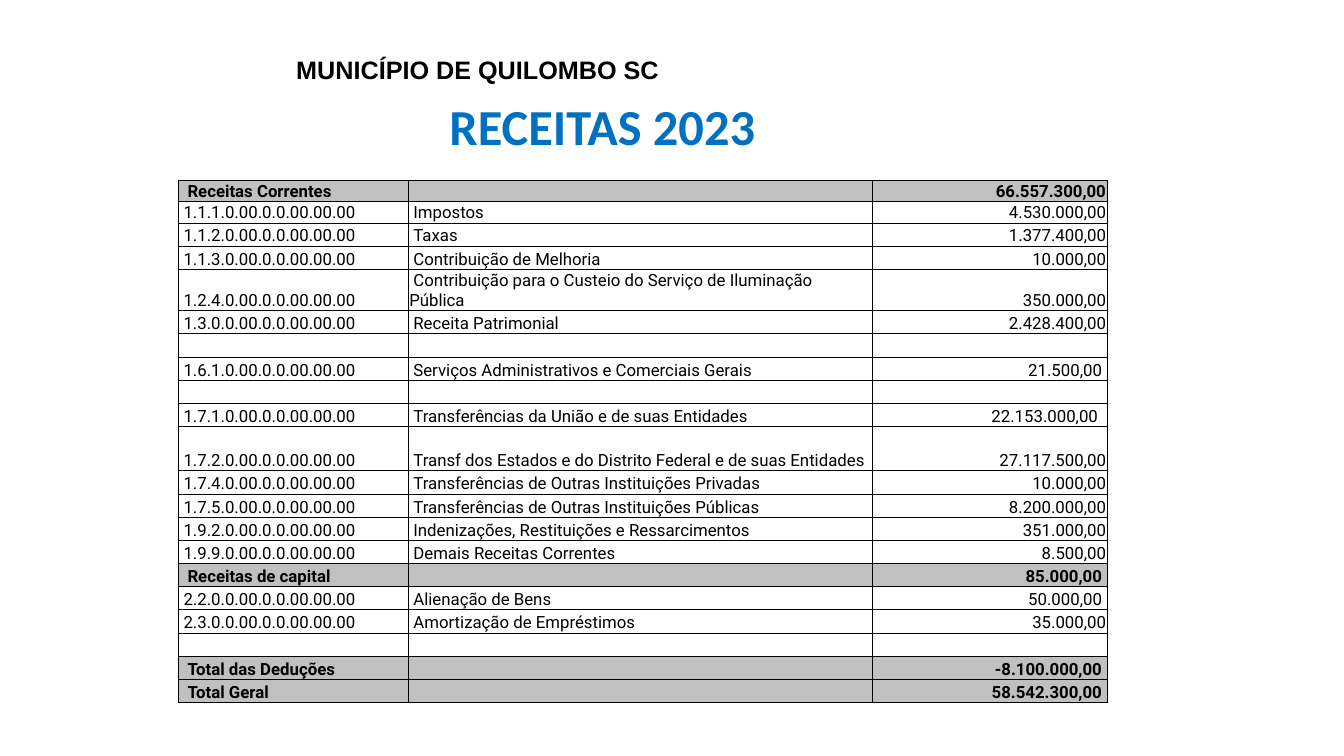
from typing import NamedTuple

from lxml import etree
from pptx import Presentation
from pptx.dml.color import RGBColor
from pptx.enum import text
from pptx.oxml import ns
from pptx.util import Inches, Pt

BLACK = RGBColor(0, 0, 0)
BLUE = RGBColor(0x00, 0x70, 0xC0)
GREY = RGBColor(0xC0, 0xC0, 0xC0)
SPACE = 0.04
INSET = 0.01
LEFT, RIGHT = text.PP_ALIGN.LEFT, text.PP_ALIGN.RIGHT


class Heading(NamedTuple):
    wording: str
    left: float
    top: float
    width: float
    height: float
    font: str
    size: int
    color: RGBColor
    align: text.PP_ALIGN
    wrap: bool


class Revenue(NamedTuple):
    code: str = ""
    name: str = ""
    amount: str = ""
    height: float = 0.23
    total: bool = False
    end_spaces: int = 0


HEADINGS = [
    Heading("RECEITAS 2023", 0, 0.89, 11.95, 1.31, "Calibri", 36, BLUE, text.PP_ALIGN.CENTER, True),
    Heading("MUNICÍPIO DE QUILOMBO SC", 2.84, 0.49, 3.83, 0.4, "Arial", 18, BLACK, LEFT, False),
]
COLUMN_WIDTHS = [2.28, 4.6, 2.33]
REVENUES = [
    Revenue("Receitas Correntes", "", "66.557.300,00", 0.21, total=True),
    Revenue("1.1.1.0.00.0.0.00.00.00", "Impostos", "4.530.000,00", 0.21),
    Revenue("1.1.2.0.00.0.0.00.00.00", "Taxas", "1.377.400,00"),
    Revenue("1.1.3.0.00.0.0.00.00.00", "Contribuição de Melhoria", "10.000,00"),
    Revenue("1.2.4.0.00.0.0.00.00.00",
            "Contribuição para o Custeio do Serviço de Iluminação Pública", "350.000,00", 0.41),
    Revenue("1.3.0.0.00.0.0.00.00.00", "Receita Patrimonial", "2.428.400,00"),
    Revenue(),
    Revenue("1.6.1.0.00.0.0.00.00.00", "Serviços Administrativos e Comerciais Gerais",
            "21.500,00", end_spaces=1),
    Revenue(),
    Revenue("1.7.1.0.00.0.0.00.00.00", "Transferências da União e de suas Entidades",
            "22.153.000,00", end_spaces=2),
    Revenue("1.7.2.0.00.0.0.00.00.00",
            "Transf dos Estados e do Distrito Federal e de suas Entidades", "27.117.500,00", 0.44),
    Revenue("1.7.4.0.00.0.0.00.00.00", "Transferências de Outras Instituições Privadas", "10.000,00"),
    Revenue("1.7.5.0.00.0.0.00.00.00", "Transferências de Outras Instituições Públicas", "8.200.000,00"),
    Revenue("1.9.2.0.00.0.0.00.00.00", "Indenizações, Restituições e Ressarcimentos", "351.000,00"),
    Revenue("1.9.9.0.00.0.0.00.00.00", "Demais Receitas Correntes", "8.500,00"),
    Revenue("Receitas de capital", "", "85.000,00", total=True, end_spaces=1),
    Revenue("2.2.0.0.00.0.0.00.00.00", "Alienação de Bens", "50.000,00", end_spaces=1),
    Revenue("2.3.0.0.00.0.0.00.00.00", "Amortização de Empréstimos", "35.000,00"),
    Revenue(),
    Revenue("Total das Deduções", "", "-8.100.000,00", total=True, end_spaces=1),
    Revenue("Total Geral", "", "58.542.300,00", total=True, end_spaces=1),
]


def add_heading(page, heading: Heading) -> None:
    box = page.shapes.add_textbox(*map(Inches, heading[1:5]))
    frame = box.text_frame
    frame.word_wrap = heading.wrap
    frame.text = heading.wording
    para = frame.paragraphs[0]
    para.alignment = heading.align
    font = para.runs[0].font
    font.name, font.size, font.bold = heading.font, Pt(heading.size), True
    font.color.rgb = heading.color


def add_borders(cell) -> None:
    properties = cell._tc.get_or_add_tcPr()
    for position, side in enumerate(("lnL", "lnR", "lnT", "lnB")):
        line = etree.Element(ns.qn(f"a:{side}"), w=str(Pt(0.5)))
        fill = etree.SubElement(line, ns.qn("a:solidFill"))
        etree.SubElement(fill, ns.qn("a:srgbClr"), val=str(BLACK))
        properties.insert(position, line)


def fill_cell(cell, wording: str, revenue: Revenue, align: text.PP_ALIGN) -> None:
    end_spaces = revenue.end_spaces if align == RIGHT else 0
    cell.margin_left = cell.margin_top = Inches(INSET)
    cell.margin_right = Inches(INSET + SPACE * end_spaces)
    cell.margin_bottom = 0
    cell.vertical_anchor = text.MSO_ANCHOR.BOTTOM
    if revenue.total:
        cell.fill.solid()
        cell.fill.fore_color.rgb = GREY
    else:
        cell.fill.background()
    add_borders(cell)
    cell.text_frame.text = wording
    para = cell.text_frame.paragraphs[0]
    para.alignment = align
    if align == LEFT:
        indent = SPACE * (2 if revenue.total else 1)
        para._p.get_or_add_pPr().set("indent", str(Inches(indent)))
    for span in para.runs:
        span.font.name, span.font.size, span.font.bold = "Roboto", Pt(12), revenue.total
        span.font.color.rgb = BLACK
    if not wording:
        para._p.get_or_add_endParaRPr().set("sz", "1200")


def add_revenue_table(page) -> None:
    height = sum(revenue.height for revenue in REVENUES)
    frame = page.shapes.add_table(len(REVENUES), len(COLUMN_WIDTHS), Inches(1.77), Inches(1.79),
                                  Inches(sum(COLUMN_WIDTHS)), Inches(height))
    table = frame.table
    table.first_row = table.horz_banding = False
    for column, width in zip(table.columns, COLUMN_WIDTHS):
        column.width = Inches(width)
    for row, revenue in zip(table.rows, REVENUES):
        row.height = Inches(revenue.height)
        for cell, wording, align in zip(row.cells, revenue[:3], (LEFT, LEFT, RIGHT)):
            fill_cell(cell, wording, revenue, align)


def main() -> None:
    deck = Presentation()
    deck.slide_width, deck.slide_height = Inches(13.33), Inches(7.5)
    page = deck.slides.add_slide(deck.slide_layouts[6])
    for heading in HEADINGS:
        add_heading(page, heading)
    add_revenue_table(page)
    deck.save("out.pptx")


if __name__ == "__main__":
    main()
